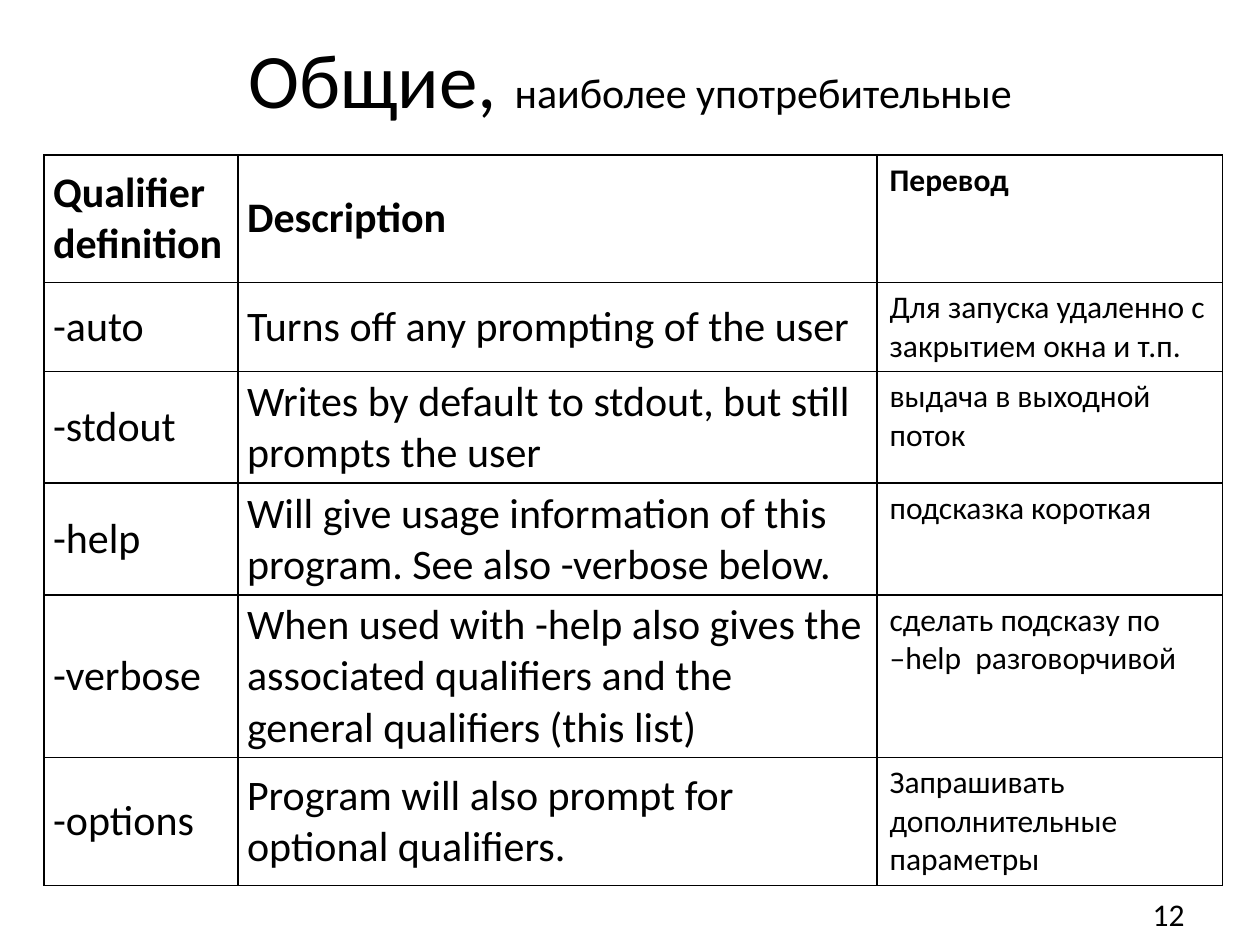
from pptx import Presentation
from pptx import util as u
from pptx.dml.color import RGBColor
from pptx.enum import text as t
from pptx.oxml import parse_xml
from pptx.oxml.ns import nsdecls


def write(para, words, size=24, bold=False, color="000000", align=t.PP_ALIGN.LEFT):
    para.alignment = align
    for i, line in enumerate(words.split("\n")):
        if i:
            para.add_line_break()
        run = para.add_run()
        run.text = line
        run.font.name = "Calibri"
        run.font.size = u.Pt(size)
        run.font.bold = bold
        run.font.color.rgb = RGBColor.from_string(color)


def frame(cell, color="000000"):
    for side in "LRTB":
        cell._tc.get_or_add_tcPr().append(parse_xml(
            f'<a:ln{side} {nsdecls("a")} w="12700"><a:solidFill>'
            f'<a:srgbClr val="{color}"/></a:solidFill></a:ln{side}>'))


rows = [
    ("Qualifier definition", "Description", "Перевод"),
    ("-auto", "Turns off any prompting of the user",
     "Для запуска удаленно с закрытием окна и т.п."),
    ("-stdout", "Writes by default to stdout, but still prompts the user",
     "выдача в выходной поток"),
    ("-help", "Will give usage information of this program. See also -verbose below.",
     "подсказка короткая"),
    ("-verbose", "When used with -help also gives the associated qualifiers "
     "and the general qualifiers (this list)",
     "сделать подсказу по \n–help  разговорчивой"),
    ("-options", "Program will also prompt for optional qualifiers.",
     "Запрашивать дополнительные параметры"),
]
wide = [3.91, 12.88, 6.96]
high = [2.57, 1.8, 2.25, 2.25, 3.28, 2.58]

deck = Presentation()
deck.slide_width, deck.slide_height = u.Cm(25.4), u.Cm(19.05)
slide = deck.slides.add_slide(deck.slide_layouts[5])

title = slide.shapes.title
title.left, title.top = u.Cm(1.27), u.Cm(0.53)
title.width, title.height = u.Cm(22.86), u.Cm(2.08)
title.text_frame.vertical_anchor = t.MSO_ANCHOR.MIDDLE
head = title.text_frame.paragraphs[0]
write(head, "Общие, ", size=44, align=t.PP_ALIGN.CENTER)
write(head, "наиболее употребительные", align=t.PP_ALIGN.CENTER)

page = slide.shapes.add_textbox(u.Cm(18.21), u.Cm(17.91), u.Cm(5.92), u.Cm(1.02)).text_frame
page.word_wrap = True
page.vertical_anchor = t.MSO_ANCHOR.MIDDLE
write(page.paragraphs[0], "12", size=18, align=t.PP_ALIGN.RIGHT)

grid = slide.shapes.add_table(len(rows), len(wide), u.Cm(0.89), u.Cm(3.12),
                              u.Cm(sum(wide)), u.Cm(sum(high))).table
grid.first_row = grid.horz_banding = False
for col, size in zip(grid.columns, wide):
    col.width = u.Cm(size)
for row, size in zip(grid.rows, high):
    row.height = u.Cm(size)

for r, row in enumerate(rows):
    for c, words in enumerate(row):
        cell = grid.cell(r, c)
        frame(cell)
        cell.fill.solid()
        cell.fill.fore_color.rgb = RGBColor.from_string("FFFFFF")
        if c < 2:
            cell.vertical_anchor = t.MSO_ANCHOR.MIDDLE
            cell.margin_left = cell.margin_right = u.Cm(0.18)
            cell.margin_top = cell.margin_bottom = u.Cm(0.1)
        write(cell.text_frame.paragraphs[0], words, size=24 if c < 2 else 18, bold=r == 0)

deck.save("out.pptx")
